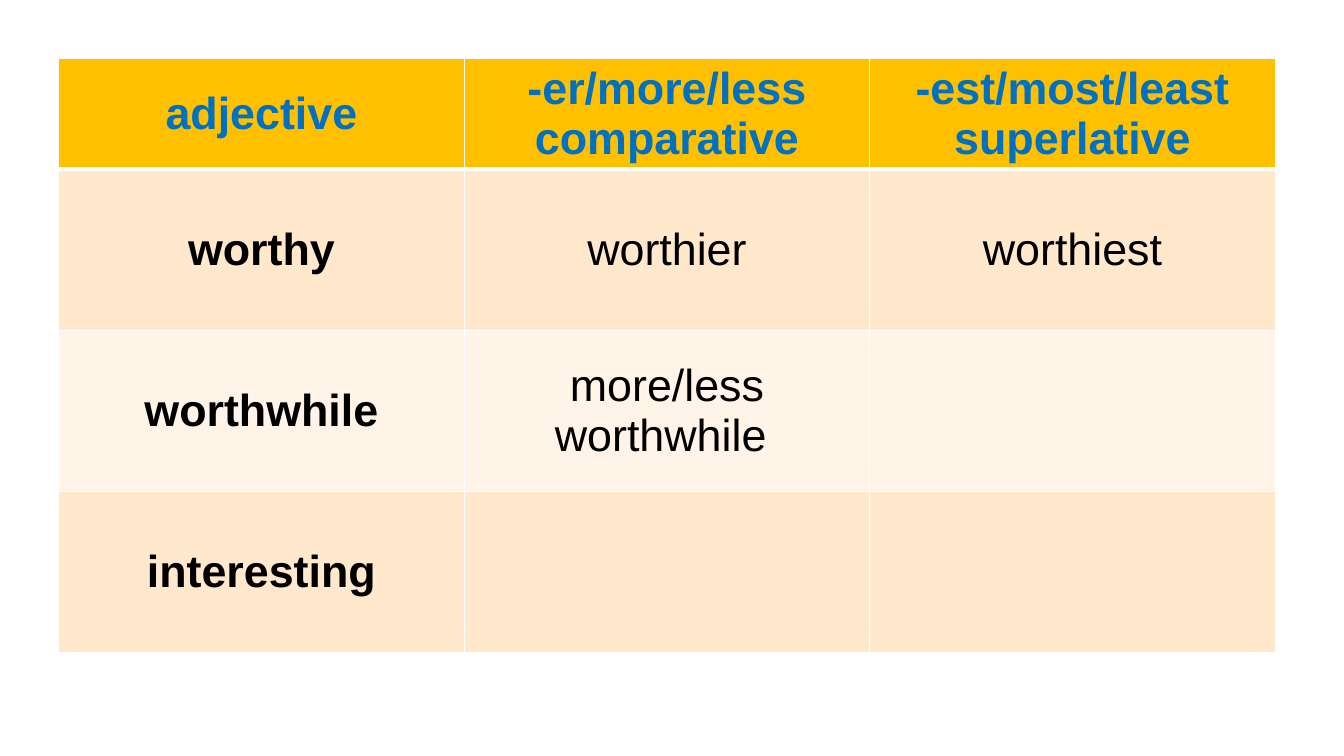
from dataclasses import dataclass

from lxml import etree
from pptx import Presentation
from pptx.dml.color import RGBColor
from pptx.enum.text import MSO_ANCHOR, PP_ALIGN
from pptx.oxml.ns import qn
from pptx.table import _Cell
from pptx.util import Cm, Pt

CENTER = PP_ALIGN.CENTER
MIDDLE = MSO_ANCHOR.MIDDLE
WHITE = RGBColor(0xFF, 0xFF, 0xFF)
BLACK = RGBColor(0x00, 0x00, 0x00)
BLUE = RGBColor(0x00, 0x70, 0xC0)
GOLD = RGBColor(0xFF, 0xC0, 0x00)
PEACH = RGBColor(0xFF, 0xE8, 0xCC)
CREAM = RGBColor(0xFF, 0xF4, 0xE7)
BLANK_LAYOUT = 6
COLUMN_WIDTH = Cm(10.22)


@dataclass(frozen=True)
class Row:
    texts: tuple[str, str, str]
    fill: RGBColor
    height: Cm = Cm(4.06)
    color: RGBColor = BLACK
    header: bool = False


ROWS = [
    Row(("adjective", "-er/more/less\ncomparative", "-est/most/least\nsuperlative"),
        GOLD, Cm(2.44), BLUE, True),
    Row(("worthy", "worthier", "worthiest"), PEACH),
    Row(("worthwhile", "more/less\nworthwhile ", ""), CREAM),
    Row(("interesting", "", ""), PEACH),
]


def set_border(cell: _Cell, side: str, width: Pt) -> None:
    ln = etree.SubElement(cell._tc.get_or_add_tcPr(), qn(f"a:ln{side}"), w=str(int(width)))
    fill = etree.SubElement(ln, qn("a:solidFill"))
    etree.SubElement(fill, qn("a:srgbClr"), val=str(WHITE))


def format_cell(cell: _Cell, text: str, row: Row, bold: bool,
                top: Pt, bottom: Pt) -> None:
    for side, width in (("L", Pt(1)), ("R", Pt(1)), ("T", top), ("B", bottom)):
        set_border(cell, side, width)
    cell.fill.solid()
    cell.fill.fore_color.rgb = row.fill
    cell.vertical_anchor = MIDDLE
    cell.text = text
    for p in cell.text_frame.paragraphs:
        p.alignment = CENTER
        p.font.name = "Arial"
        p.font.size = Pt(32)
        p.font.bold = bold
        p.font.color.rgb = row.color


def main() -> None:
    prs = Presentation()
    prs.slide_width, prs.slide_height = Cm(33.87), Cm(19.05)
    s = prs.slides.add_slide(prs.slide_layouts[BLANK_LAYOUT])
    table = s.shapes.add_table(
        len(ROWS), 3, Cm(1.48), Cm(1.48), COLUMN_WIDTH * 3,
        sum(row.height for row in ROWS)).table
    table.horz_banding = False
    for column in table.columns:
        column.width = COLUMN_WIDTH
    for i, row in enumerate(ROWS):
        table.rows[i].height = row.height
        top = Pt(3) if i and ROWS[i - 1].header else Pt(1)
        bottom = Pt(3) if row.header else Pt(1)
        for j, text in enumerate(row.texts):
            format_cell(table.cell(i, j), text, row, row.header or j == 0, top, bottom)
    prs.save("out.pptx")


if __name__ == "__main__":
    main()
